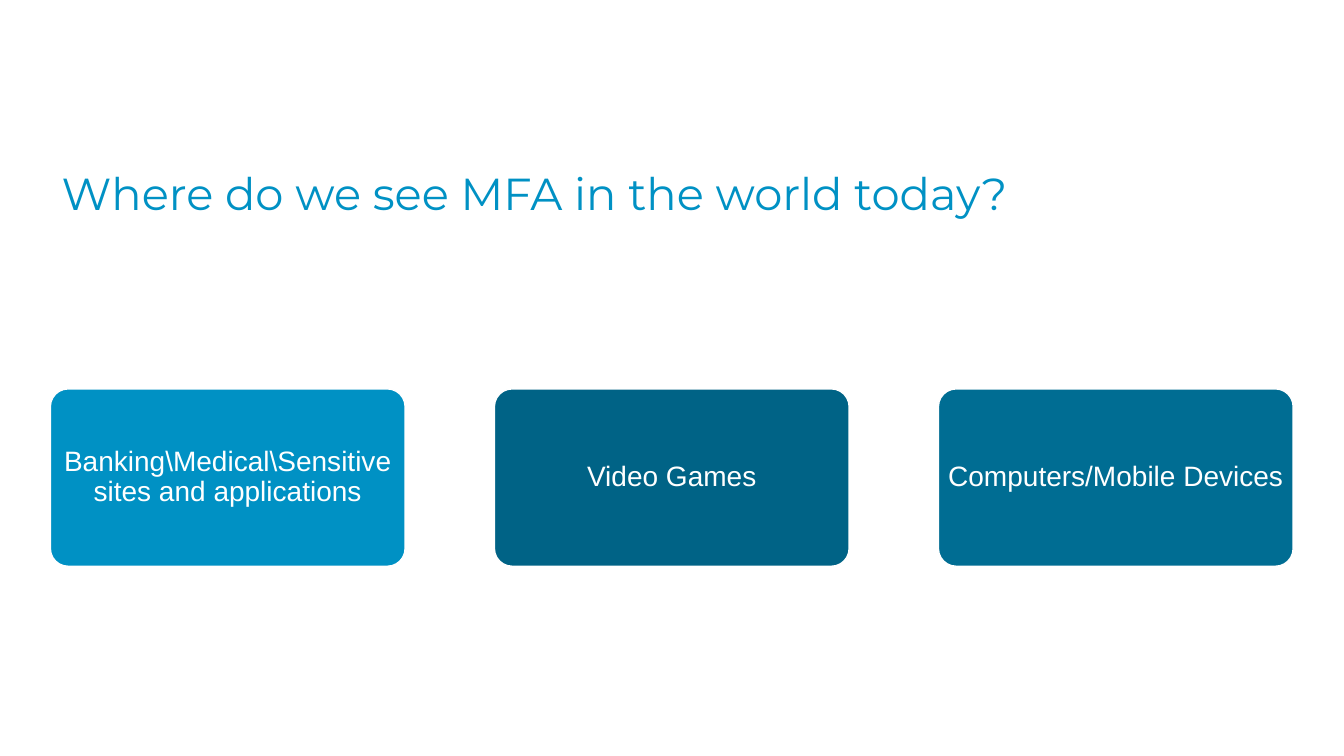
from dataclasses import dataclass

from pptx import Presentation
from pptx.dml.color import RGBColor
from pptx.enum.shapes import MSO_SHAPE
from pptx.enum.text import MSO_ANCHOR, MSO_AUTO_SIZE, PP_ALIGN
from pptx.util import Cm, Pt

ROUNDED = MSO_SHAPE.ROUNDED_RECTANGLE
MIDDLE = MSO_ANCHOR.MIDDLE
NO_AUTOFIT = MSO_AUTO_SIZE.NONE
LEFT, CENTER = PP_ALIGN.LEFT, PP_ALIGN.CENTER

TITLE = "Where do we see MFA in the world today?"
PLACES = [
    ("Banking\\Medical\\Sensitive sites and applications", "0091C4"),
    ("Video Games", "006386"),
    ("Computers/Mobile Devices", "006D93"),
]


@dataclass(frozen=True)
class Theme:
    accent: str = "0091C4"
    white: str = "FFFFFF"
    title_font: str = "Montserrat"
    card_font: str = "Arial"
    title_size: int = 32
    card_size: int = 20
    line_spacing: float = 0.9


THEME = Theme()
SLIDE_WIDTH, SLIDE_HEIGHT = 33.87, 19.05
TITLE_BOX = (1.3, 3.84, 31.29, 2.18)
CARD_LEFT, CARD_TOP, CARD_WIDTH, CARD_HEIGHT = 1.27, 9.8, 8.94, 4.47
CARD_GAP = 2.25
CARD_ROUNDING = 0.1

FRAME_FORMAT = {"word_wrap": True, "auto_size": NO_AUTOFIT, "vertical_anchor": MIDDLE}
CARD_MARGINS = {
    "margin_left": Cm(0.08),
    "margin_right": Cm(0.08),
    "margin_top": Cm(0.08),
    "margin_bottom": Cm(0.08),
}
TITLE_FONT = {"name": THEME.title_font, "size": Pt(THEME.title_size), "bold": False}
CARD_FONT = {"name": THEME.card_font, "size": Pt(THEME.card_size), "bold": False}


def apply_format(target, values):
    for name, value in values.items():
        setattr(target, name, value)


def write_text(frame, text, align, font_format, color):
    apply_format(frame, FRAME_FORMAT)
    para = frame.paragraphs[0]
    apply_format(para, {"alignment": align, "line_spacing": THEME.line_spacing})
    span = para.add_run()
    span.text = text
    apply_format(span.font, font_format)
    span.font.color.rgb = RGBColor.from_string(color)


def add_title(page):
    box = page.shapes.title
    box.left, box.top, box.width, box.height = map(Cm, TITLE_BOX)
    write_text(box.text_frame, TITLE, LEFT, TITLE_FONT, THEME.accent)


def add_card(page, index, text, fill):
    left = CARD_LEFT + index * (CARD_WIDTH + CARD_GAP)
    card = page.shapes.add_shape(
        ROUNDED, Cm(left), Cm(CARD_TOP), Cm(CARD_WIDTH), Cm(CARD_HEIGHT)
    )
    card.adjustments[0] = CARD_ROUNDING
    card.shadow.inherit = False
    card.fill.solid()
    card.fill.fore_color.rgb = RGBColor.from_string(fill)
    card.line.color.rgb = RGBColor.from_string(THEME.white)
    card.line.width = Pt(1)
    apply_format(card.text_frame, CARD_MARGINS)
    write_text(card.text_frame, text, CENTER, CARD_FONT, THEME.white)


def main():
    deck = Presentation()
    deck.slide_width, deck.slide_height = Cm(SLIDE_WIDTH), Cm(SLIDE_HEIGHT)
    page = deck.slides.add_slide(deck.slide_layouts.get_by_name("Title Only"))
    add_title(page)
    for index, (text, fill) in enumerate(PLACES):
        add_card(page, index, text, fill)
    deck.save("out.pptx")


if __name__ == "__main__":
    main()
